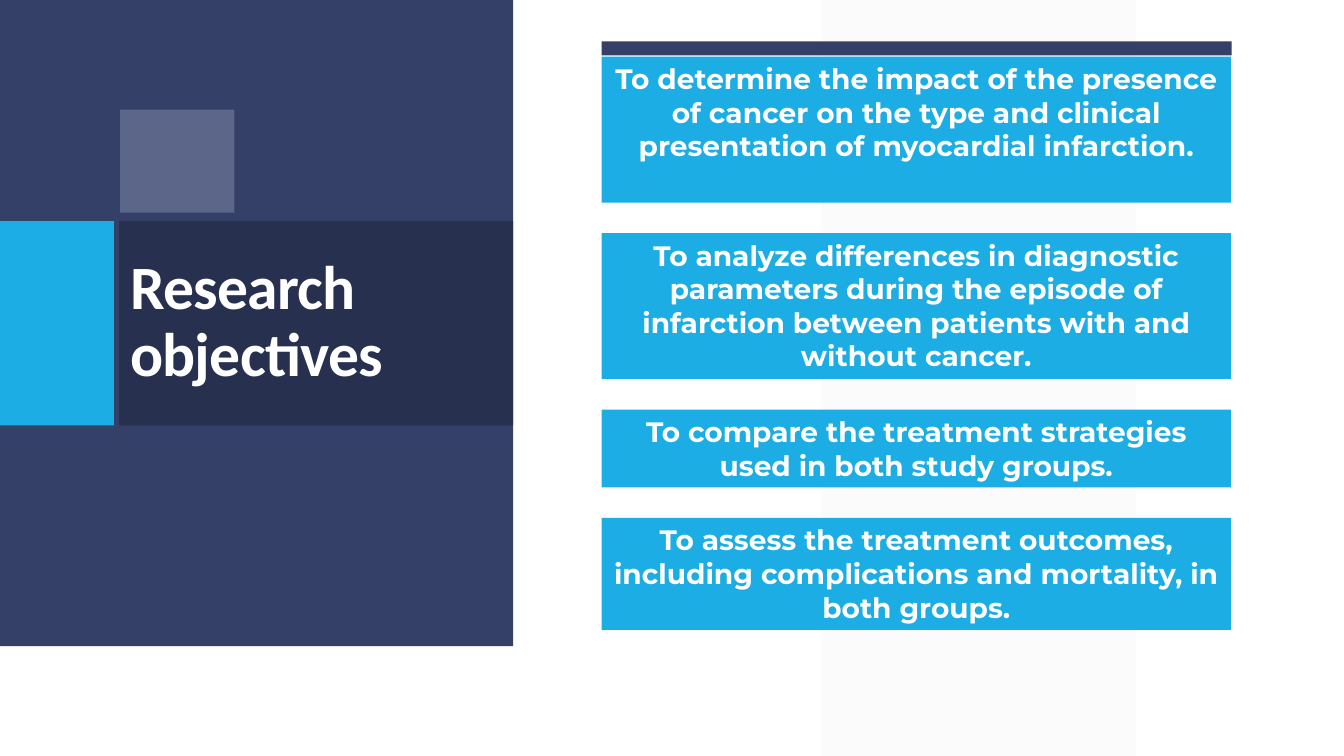
import dataclasses

import pptx
import pptx.dml.color
import pptx.enum.shapes
import pptx.enum.text
import pptx.oxml.ns
import pptx.oxml.xmlchemy
import pptx.util
from lxml import etree

Pt = pptx.util.Pt
ALIGN = pptx.enum.text.PP_ALIGN
ANCHOR = pptx.enum.text.MSO_ANCHOR

HUES = {
    "navy": "344068",
    "dark": "27304E",
    "cyan": "1CADE4",
    "mist": "D0D5E7",
    "pale": "F2F2F2",
    "white": "FFFFFF",
}


@dataclasses.dataclass
class Block:
    left: float
    top: float
    width: float
    height: float
    hue: str
    alpha: int = 100  # percent


@dataclasses.dataclass
class Goal:
    text: str
    height: float


BLOCKS = [
    Block(586.8, 0, 224.6, 540, "pale", 30),
    Block(0, 0, 366.5, 461.5, "navy"),
    Block(0, 157.9, 81.4, 146, "cyan"),
    Block(429.8, 29.6, 450, 10, "navy"),
    Block(85, 157.9, 281.5, 146, "dark"),
    Block(85.9, 78.3, 81.6, 73.6, "mist", 26),
]

GOALS = [
    Goal("To determine the impact of the presence of cancer on the type "
         "and clinical presentation of myocardial infarction.", 104.3),
    Goal("To analyze differences in diagnostic parameters during the episode "
         "of infarction between patients with and without cancer.", 104.3),
    Goal("To compare the treatment strategies used in both study groups.", 55.7),
    Goal("To assess the treatment outcomes, including complications and "
         "mortality, in both groups.", 80),
]
LEFT, TOP, WIDTH, GAP = 429.8, 40.4, 449.5, 21.75


def color(hue: str) -> pptx.dml.color.RGBColor:
    return pptx.dml.color.RGBColor.from_string(HUES[hue])


def draw(slide, block: Block):
    """Add a plain filled box."""
    shape = slide.shapes.add_shape(
        pptx.enum.shapes.MSO_SHAPE.RECTANGLE,
        Pt(block.left), Pt(block.top), Pt(block.width), Pt(block.height))
    shape.shadow.inherit = False
    shape.line.fill.background()
    shape.fill.solid()
    shape.fill.fore_color.rgb = color(block.hue)
    if block.alpha < 100:
        qn = pptx.oxml.ns.qn
        tint = shape._element.spPr.find(".//" + qn("a:srgbClr"))
        etree.SubElement(tint, qn("a:alpha"), val=str(block.alpha * 1000))
    return shape


def write(shape, text: str, *, font: str, size: float, hue: str = "white",
          align=ALIGN.LEFT, anchor=ANCHOR.TOP, lead: float = 1.0,
          track: float = 0) -> None:
    """Fill a shape with one bold paragraph."""
    frame = shape.text_frame
    frame.word_wrap = True
    frame.auto_size = pptx.enum.text.MSO_AUTO_SIZE.NONE
    frame.vertical_anchor = anchor
    para = frame.paragraphs[0]
    para.alignment = align
    para.line_spacing = lead
    run = para.add_run()
    run.text = text
    run.font.name = font
    run.font.size = Pt(size)
    run.font.bold = True
    run.font.color.rgb = color(hue)
    if track:
        run.font._element.set("spc", str(int(track * 100)))


def main() -> None:
    deck = pptx.Presentation()
    deck.slide_width, deck.slide_height = Pt(960), Pt(540)
    slide = deck.slides.add_slide(deck.slide_layouts[5])

    # Side panel and accents
    for block in BLOCKS:
        draw(slide, block)

    # Title, in front of its panel
    title = slide.shapes.title
    slide.shapes._spTree.append(title._element)
    title.left, title.top = Pt(85.7), Pt(148.3)
    title.width, title.height = Pt(260.6), Pt(165)
    write(title, "Research objectives", font="Calibri", size=44,
          anchor=ANCHOR.MIDDLE, lead=0.9, track=-0.5)

    # Stack of goals
    top = TOP
    for goal in GOALS:
        card = draw(slide, Block(LEFT, top, WIDTH, goal.height, "cyan"))
        write(card, goal.text, font="Montserrat", size=20, align=ALIGN.CENTER)
        top += goal.height + GAP

    deck.save("out.pptx")


if __name__ == "__main__":
    main()
